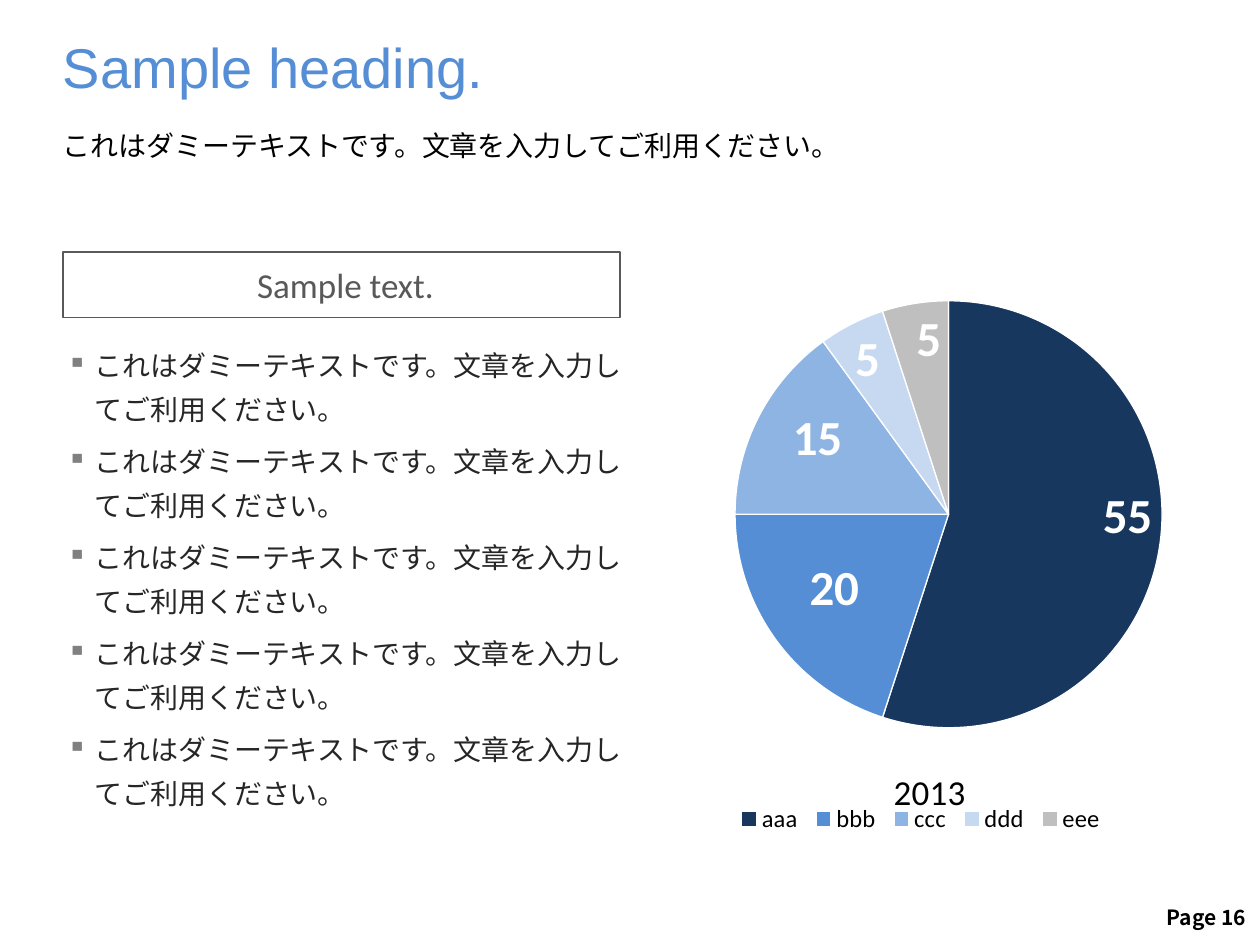
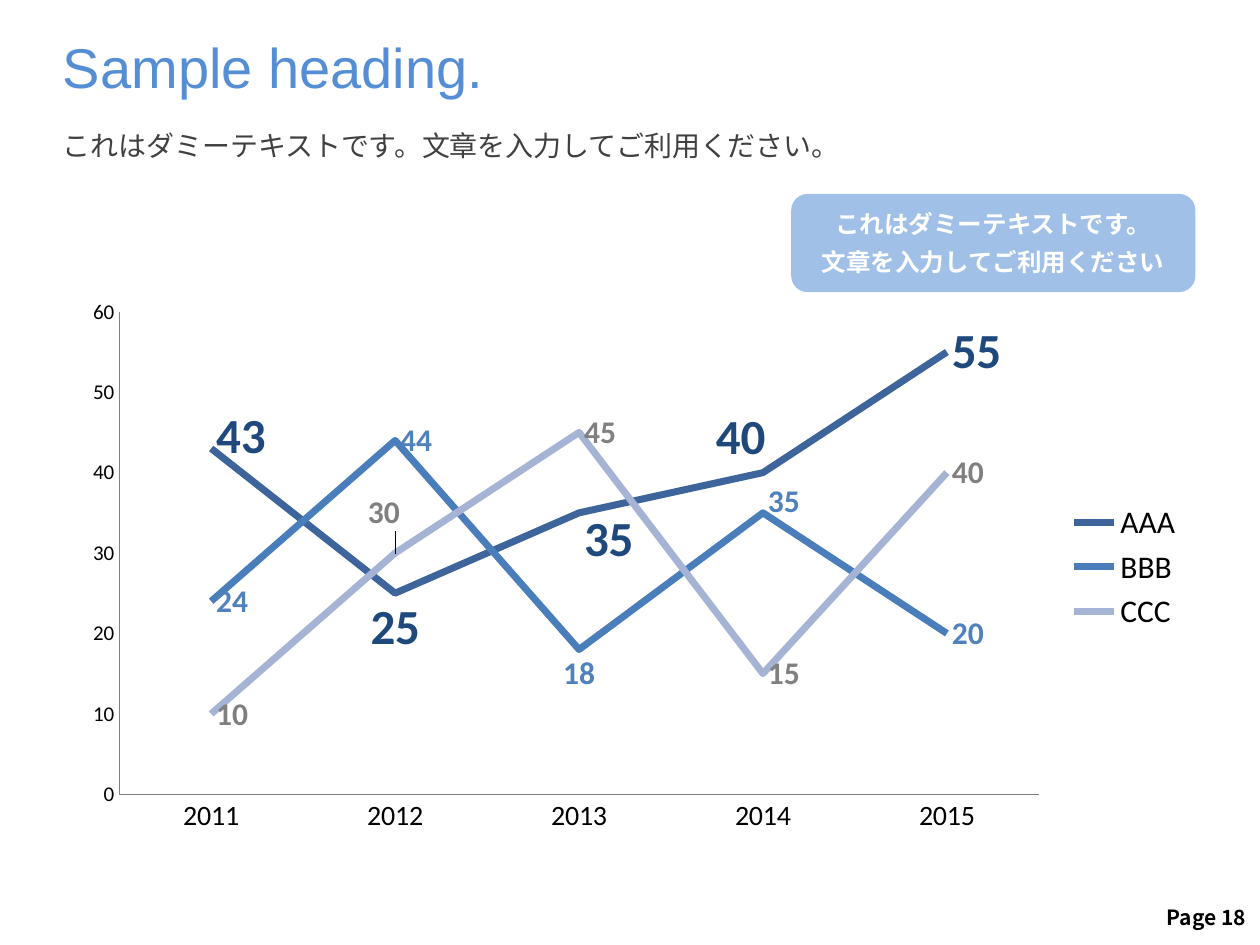
from lxml import etree
from pptx import Presentation
from pptx import util as u
from pptx.chart import data as chart_data
from pptx.dml.color import RGBColor
from pptx.enum import chart as ch, shapes, text
from pptx.oxml import ns

BLACK = RGBColor(0x00, 0x00, 0x00)
WHITE = RGBColor(0xFF, 0xFF, 0xFF)
INK = RGBColor(0x26, 0x26, 0x26)
DARK = RGBColor(0x40, 0x40, 0x40)
FRAME = RGBColor(0x59, 0x59, 0x59)
GREY = RGBColor(0x80, 0x80, 0x80)
SILVER = RGBColor(0xBF, 0xBF, 0xBF)
NAVY = RGBColor(0x17, 0x37, 0x5E)
BLUE = RGBColor(0x55, 0x8E, 0xD5)
SKY = RGBColor(0x8E, 0xB4, 0xE3)
PALE = RGBColor(0xC6, 0xD9, 0xF1)
DEEP_LABEL = RGBColor(0x1F, 0x49, 0x7D)
MID_LABEL = RGBColor(0x4F, 0x81, 0xBD)
LINE_DEEP = RGBColor(0x3D, 0x65, 0x9B)
LINE_MID = RGBColor(0x4A, 0x7E, 0xBB)
LINE_PALE = RGBColor(0xA5, 0xB3, 0xD4)

FONT = "Calibri"
HEADING = "Sample heading."
DUMMY = "これはダミーテキストです。文章を入力してご利用ください。"
CALLOUT = ["これはダミーテキストです。", "文章を入力してご利用ください"]
BULLETS = [DUMMY] * 5

PIE_NAME = "2013"
PIE_SLICES = [("aaa", 55, NAVY), ("bbb", 20, BLUE), ("ccc", 15, SKY),
              ("ddd", 5, PALE), ("eee", 5, SILVER)]
PIE_LABEL_SHIFTS = {1: (0.05, -0.03), 2: (0.05, -0.02)}

YEARS = ["2011", "2012", "2013", "2014", "2015"]
POS = ch.XL_LABEL_POSITION
TRENDS = [
    {"name": "AAA", "values": [43, 25, 35, 40, 55], "line": LINE_DEEP,
     "label": {"size": u.Pt(28), "color": DEEP_LABEL},
     "moved": {0: (POS.RIGHT, 0, -0.02), 1: (POS.BELOW, 0, 0),
               2: (POS.RIGHT, 0, 0.05), 3: (POS.ABOVE, -0.02, 0)}},
    {"name": "BBB", "values": [24, 44, 18, 35, 20], "line": LINE_MID,
     "label": {"size": u.Pt(18), "color": MID_LABEL},
     "moved": {2: (POS.BELOW, 0, 0), 3: (POS.RIGHT, 0, -0.02)}},
    {"name": "CCC", "values": [10, 30, 45, 15, 40], "line": LINE_PALE,
     "label": {"size": u.Pt(18), "color": GREY},
     "moved": {1: (POS.ABOVE, -0.01, -0.03)}},
]

HEAD_INSETS = (0, 0.13, 0.25, 0.13)
NO_INSETS = (0, 0, 0, 0)


def cm(*lengths):
    return [u.Cm(length) for length in lengths]


def style_font(font, color=BLACK, **values):
    for name, value in {"name": FONT, "bold": False, **values}.items():
        setattr(font, name, value)
    font.color.rgb = color


def add_xml(parent, tag, **attributes):
    return etree.SubElement(parent, ns.qn(tag), attributes)


def write(shape, lines, insets, align=text.PP_ALIGN.LEFT, anchor=text.MSO_ANCHOR.TOP,
          wrap=True, spacing=None, before=0, bullet=None, **font):
    frame = shape.text_frame
    sides = ("margin_left", "margin_top", "margin_right", "margin_bottom")
    settings = dict(zip(sides, cm(*insets)), word_wrap=wrap, vertical_anchor=anchor)
    for name, value in settings.items():
        setattr(frame, name, value)
    for index, line in enumerate(lines):
        para = frame.add_paragraph() if index else frame.paragraphs[0]
        para.alignment = align
        if spacing:
            para.line_spacing = spacing
        if index and before:
            para.space_before = u.Pt(before)
        if bullet:
            props = para._p.get_or_add_pPr()
            props.set("marL", str(u.Cm(0.56)))
            props.set("indent", str(-u.Cm(0.56)))
            add_xml(add_xml(props, "a:buClr"), "a:srgbClr", val=str(GREY))
            add_xml(props, "a:buChar", char=bullet)
        span = para.add_run()
        span.text = line
        style_font(span.font, **font)
        add_xml(span._r.get_or_add_rPr(), "a:ea", typeface=span.font.name)


def add_text(page, place, lines, insets, **options):
    write(page.shapes.add_textbox(*cm(*place)), lines, insets, **options)


def add_block(page, kind, place):
    block = page.shapes.add_shape(kind, *cm(*place))
    block.shadow.inherit = False
    return block


def start_page(deck, number, width, subtitle_color):
    page = deck.slides.add_slide(deck.slide_layouts[6])
    add_text(page, (23.19, 18.11, 2.18, 0.76), [f"Page {number}"],
             (0.25, 0.13, 0.25, 0.13), align=text.PP_ALIGN.RIGHT,
             anchor=text.MSO_ANCHOR.MIDDLE, wrap=False,
             name="Noto Sans CJK JP", size=u.Pt(12), bold=True)
    add_text(page, (1.27, 2.46, width, 1.52), [DUMMY], HEAD_INSETS,
             size=u.Pt(16), color=subtitle_color)
    add_text(page, (1.27, 0.53, width, 2.24), [HEADING], HEAD_INSETS,
             name="Arial", size=u.Pt(32), color=BLUE)
    return page


def set_layout(parent, index, inner=False, edge=True, **fractions):
    for old in parent.findall(ns.qn("c:layout")):
        parent.remove(old)
    layout = etree.Element(ns.qn("c:layout"))
    parent.insert(index, layout)
    manual = add_xml(layout, "c:manualLayout")
    if inner:
        add_xml(manual, "c:layoutTarget", val="inner")
    if edge:
        for mode in ("c:xMode", "c:yMode"):
            add_xml(manual, mode, val="edge")
    for name, value in fractions.items():
        add_xml(manual, f"c:{name}", val=str(value))


def add_chart(page, kind, place, categories, series, legend_at, legend_size):
    data = chart_data.CategoryChartData()
    data.categories = categories
    for name, values in series:
        data.add_series(name, values)
    chart = page.shapes.add_chart(kind, *cm(*place), data).chart
    style_font(chart.font, size=u.Pt(18))
    chart.has_title = False
    chart.has_legend = True
    chart.legend.position = legend_at
    chart.legend.include_in_layout = False
    style_font(chart.legend.font, size=u.Pt(legend_size))
    return chart


def show_labels(series, position, **font):
    labels = series.data_labels
    labels.show_value = True
    labels.position = position
    style_font(labels.font, bold=True, **font)


def move_label(series, index, position, dx, dy, **font):
    label = series.points[index].data_label
    style_font(label.font, bold=True, **font)
    label.position = position
    if dx or dy:
        set_layout(label._dLbl, 1, edge=False, x=dx, y=dy)


def add_pie(page):
    names, values, colors = zip(*PIE_SLICES)
    chart = add_chart(page, ch.XL_CHART_TYPE.PIE, (13.06, 5.84, 11.23, 11.18), names,
                      [(PIE_NAME, values)], ch.XL_LEGEND_POSITION.BOTTOM, 14)
    chart.has_title = True
    title = chart.chart_title
    title.text_frame.text = PIE_NAME
    style_font(title.text_frame.paragraphs[0].runs[0].font, size=u.Pt(20))
    set_layout(title._element, 1, x=0.43, y=0.85)
    set_layout(chart.legend._element, 1, x=0.15, y=0.92, w=0.68, h=0.07)
    set_layout(chart._chartSpace.chart.plotArea, 0, inner=True,
               x=0.08, y=0.02, w=0.92, h=0.77)
    chart.plots[0].vary_by_categories = True
    series = chart.plots[0].series[0]
    for index, color in enumerate(colors):
        look = series.points[index].format
        look.fill.solid()
        look.fill.fore_color.rgb = color
        look.line.color.rgb = WHITE
        look.line.width = u.Pt(0.75)
    font = {"size": u.Pt(28), "color": WHITE}
    show_labels(series, POS.INSIDE_END, **font)
    for index, shift in PIE_LABEL_SHIFTS.items():
        move_label(series, index, POS.INSIDE_END, *shift, **font)


def add_trends(page):
    chart = add_chart(page, ch.XL_CHART_TYPE.LINE, (1.5, 5.84, 22.61, 11.18), YEARS,
                      [(trend["name"], trend["values"]) for trend in TRENDS],
                      ch.XL_LEGEND_POSITION.RIGHT, 18)
    set_layout(chart._chartSpace.chart.plotArea, 0, inner=True,
               x=0.04, y=0.04, w=0.82, h=0.87)
    chart.plots[0].vary_by_categories = False
    for axis, size in ((chart.category_axis, 16), (chart.value_axis, 12)):
        axis.has_major_gridlines = False
        axis.major_tick_mark = axis.minor_tick_mark = ch.XL_TICK_MARK.NONE
        axis.format.line.color.rgb = GREY
        style_font(axis.tick_labels.font, size=u.Pt(size))
    scale = {"minimum_scale": 0, "maximum_scale": 60, "major_unit": 10}
    for name, value in scale.items():
        setattr(chart.value_axis, name, value)
    for series, trend in zip(chart.plots[0].series, TRENDS):
        series.smooth = False
        series.marker.style = ch.XL_MARKER_STYLE.NONE
        series.format.line.color.rgb = trend["line"]
        series.format.line.width = u.Pt(4)
        show_labels(series, POS.RIGHT, **trend["label"])
        for index, placing in trend["moved"].items():
            move_label(series, index, *placing, **trend["label"])


def build_pie_page(deck):
    page = start_page(deck, 16, 23.01, BLACK)
    add_pie(page)
    banner = add_block(page, shapes.MSO_SHAPE.RECTANGLE, (1.27, 5.08, 11.23, 1.32))
    banner.fill.background()
    banner.line.color.rgb = FRAME
    banner.line.width = u.Pt(0.75)
    write(banner, ["Sample text."], (0.41, 0.2, 0.25, 0.2), align=text.PP_ALIGN.CENTER,
          anchor=text.MSO_ANCHOR.MIDDLE, size=u.Pt(20), color=FRAME)
    add_text(page, (1.35, 6.83, 11.58, 10.19), BULLETS, NO_INSETS, spacing=1.3,
             before=5, bullet="▪", size=u.Pt(16), color=INK)


def build_trend_page(deck):
    page = start_page(deck, 18, 23.32, DARK)
    callout = add_block(page, shapes.MSO_SHAPE.ROUNDED_RECTANGLE,
                        (15.95, 3.91, 8.15, 1.98))
    callout.fill.solid()
    callout.fill.fore_color.rgb = BLUE
    tint = callout._element.spPr.find(".//" + ns.qn("a:srgbClr"))
    add_xml(tint, "a:alpha", val="55000")
    callout.line.fill.background()
    write(callout, CALLOUT, NO_INSETS, align=text.PP_ALIGN.CENTER,
          anchor=text.MSO_ANCHOR.MIDDLE, before=5, size=u.Pt(14), bold=True, color=WHITE)
    add_trends(page)


def main():
    deck = Presentation()
    deck.slide_width, deck.slide_height = cm(25.4, 19.05)
    build_pie_page(deck)
    build_trend_page(deck)
    deck.save("out.pptx")


if __name__ == "__main__":
    main()
